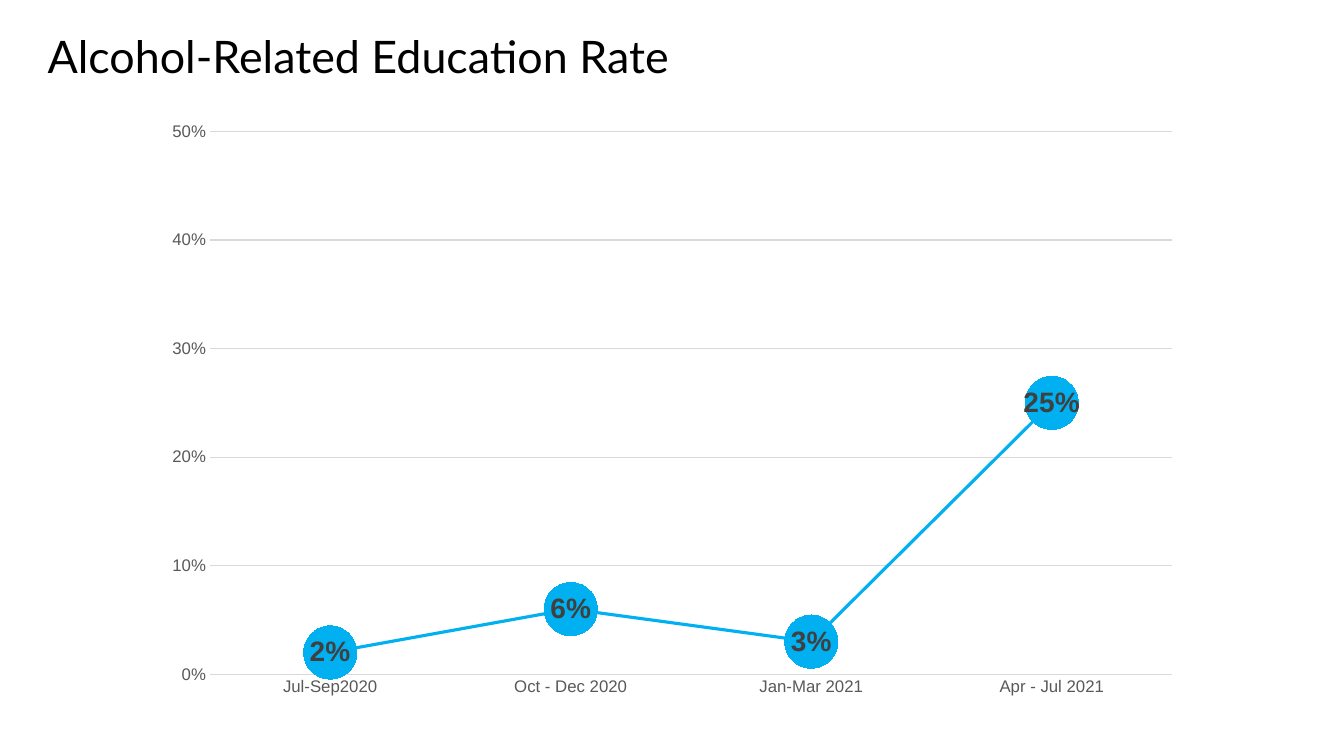
from dataclasses import dataclass

from lxml import etree
from pptx import Presentation
from pptx.chart.data import CategoryChartData
from pptx.dml.color import RGBColor
from pptx.enum.chart import (XL_CHART_TYPE, XL_LABEL_POSITION, XL_MARKER_STYLE,
                             XL_TICK_MARK)
from pptx.enum.text import MSO_ANCHOR, PP_ALIGN
from pptx.oxml.ns import qn
from pptx.util import Pt

LINE_CHART = XL_CHART_TYPE.LINE_MARKERS_STACKED
LABEL_CENTER = XL_LABEL_POSITION.CENTER
CIRCLE = XL_MARKER_STYLE.CIRCLE
NO_TICK = XL_TICK_MARK.NONE
TOP = MSO_ANCHOR.TOP
LEFT = PP_ALIGN.LEFT

BLACK, GRAY, DARK_GRAY, PALE_GRAY, BLUE = (
    "000000", "595959", "404040", "D9D9D9", "00B0F0")
PERCENT = "0%"


@dataclass
class Quarter:
    label: str
    rate: float


QUARTERS = [
    Quarter("Jul-Sep2020", 0.02),
    Quarter("Oct - Dec 2020", 0.06),
    Quarter("Jan-Mar 2021", 0.03),
    Quarter("Apr - Jul 2021", 0.25),
]


def paint(color_format, color: str) -> None:
    color_format.rgb = RGBColor.from_string(color)


def style_font(font, name: str, size: float, color: str, bold: bool = False) -> None:
    font.name, font.size, font.bold = name, Pt(size), bold
    paint(font.color, color)


def style_line(line, color: str, width: float) -> None:
    line.width = Pt(width)
    line.fill.solid()
    paint(line.color, color)


def style_axis(axis) -> None:
    axis.major_tick_mark = axis.minor_tick_mark = NO_TICK
    style_font(axis.tick_labels.font, "Arial", 12, GRAY)


def place_plot(chart, x: float, y: float, w: float, h: float) -> None:
    """Fix the inner plot area, as fractions of the chart."""
    plot_area = chart.plots[0]._element.getparent()
    for old in plot_area.findall(qn("c:layout")):
        plot_area.remove(old)
    layout = etree.Element(qn("c:layout"))
    manual = etree.SubElement(layout, qn("c:manualLayout"))
    settings = {"layoutTarget": "inner", "xMode": "edge", "yMode": "edge",
                "x": x, "y": y, "w": w, "h": h}
    for tag, value in settings.items():
        etree.SubElement(manual, qn(f"c:{tag}")).set("val", str(value))
    plot_area.insert(0, layout)


def add_title(page, text: str) -> None:
    title = page.shapes.title
    title.left, title.top, title.width, title.height = Pt(34), Pt(25), Pt(893), Pt(42.5)
    frame = title.text_frame
    frame.margin_left = frame.margin_top = frame.margin_right = frame.margin_bottom = 0
    frame.vertical_anchor = TOP
    frame.word_wrap = True
    frame.text = text
    para = frame.paragraphs[0]
    para.alignment = LEFT
    para.line_spacing = 0.9
    style_font(para.runs[0].font, "Lato", 32, BLACK)


def add_rate_chart(page, quarters: list[Quarter]) -> None:
    data = CategoryChartData(number_format=PERCENT)
    data.categories = [quarter.label for quarter in quarters]
    data.add_series("Series 1", [quarter.rate for quarter in quarters])
    chart = page.shapes.add_chart(
        LINE_CHART, Pt(108.7), Pt(79.2), Pt(743.8), Pt(427), data).chart
    chart.has_legend = chart.has_title = False
    style_font(chart.font, "Arial", 10, BLACK)
    place_plot(chart, 0.0555, 0.0345, 0.924, 0.908)

    # Axes and gridlines
    style_axis(chart.category_axis)
    style_line(chart.category_axis.format.line, PALE_GRAY, 0.75)
    rates = chart.value_axis
    style_axis(rates)
    rates.minimum_scale, rates.maximum_scale, rates.major_unit = 0, 0.5, 0.1
    rates.tick_labels.number_format = PERCENT
    rates.tick_labels.number_format_is_linked = False
    rates.format.line.fill.background()
    rates.has_major_gridlines = True
    style_line(rates.major_gridlines.format.line, PALE_GRAY, 0.75)

    # Line with round markers
    chart.plots[0].vary_by_categories = False
    series = chart.plots[0].series[0]
    series.smooth = False
    style_line(series.format.line, BLUE, 2.25)
    marker = series.marker
    marker.style, marker.size = CIRCLE, 38
    marker.format.fill.solid()
    paint(marker.format.fill.fore_color, BLUE)
    style_line(marker.format.line, BLUE, 0.75)

    # Values inside the markers
    labels = series.data_labels
    labels.show_value = True
    labels.position = LABEL_CENTER
    labels.number_format = PERCENT
    labels.number_format_is_linked = False
    style_font(labels.font, "Arial", 20, DARK_GRAY, bold=True)


def main() -> None:
    deck = Presentation()
    deck.slide_width, deck.slide_height = Pt(960), Pt(540)
    page = deck.slides.add_slide(deck.slide_layouts.get_by_name("Title Only"))
    add_title(page, "Alcohol-Related Education Rate")
    add_rate_chart(page, QUARTERS)
    deck.save("out.pptx")


if __name__ == "__main__":
    main()
